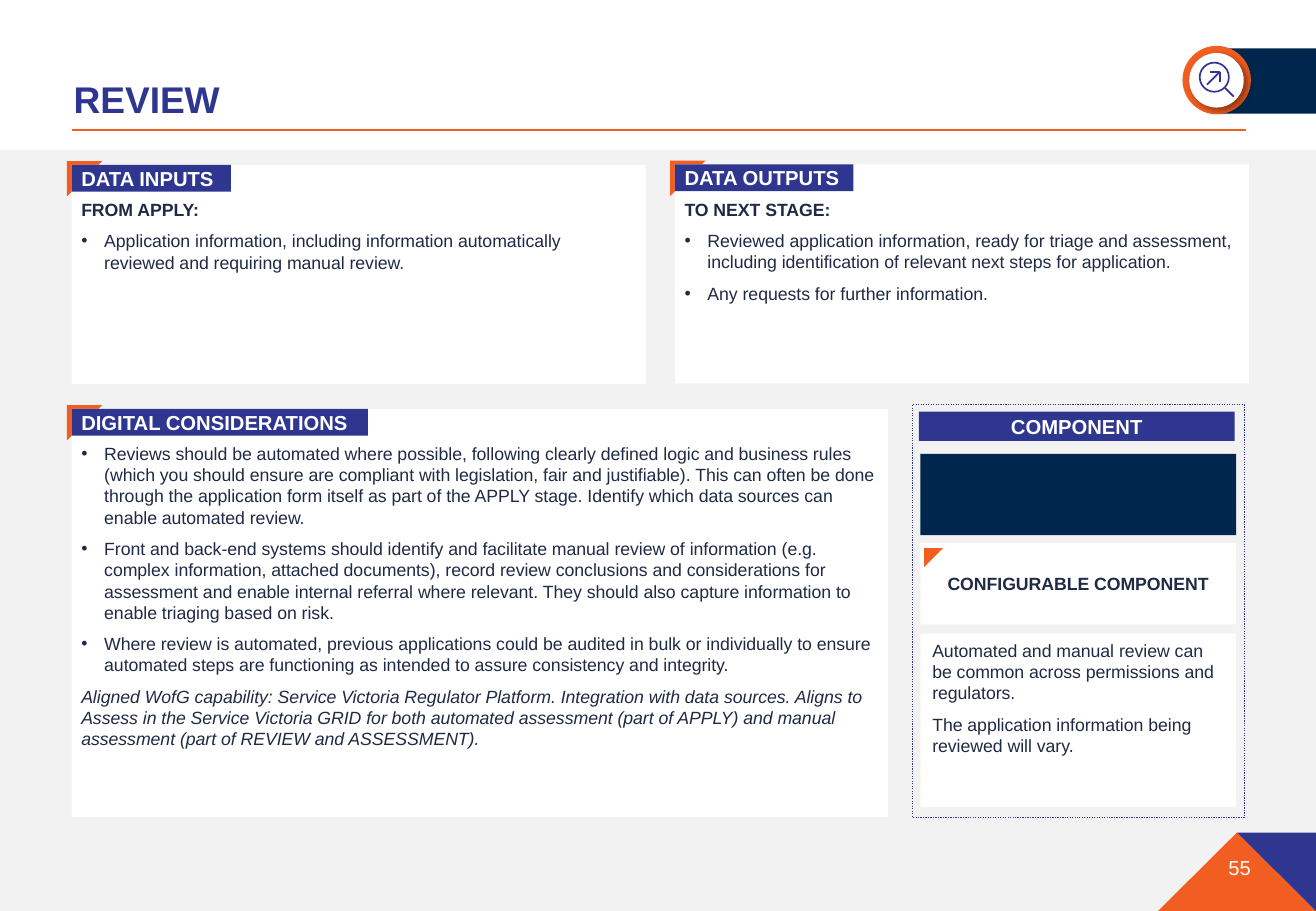
import dataclasses
import typing

import lxml.etree
import pptx
import pptx.dml.color
import pptx.enum.dml
import pptx.enum.shapes
import pptx.enum.text
import pptx.oxml.ns
import pptx.util

Cm = pptx.util.Cm
Pt = pptx.util.Pt
qn = pptx.oxml.ns.qn
Kind = pptx.enum.shapes.MSO_SHAPE
Align = pptx.enum.text.PP_ALIGN
Anchor = pptx.enum.text.MSO_ANCHOR


@dataclasses.dataclass(frozen=True)
class Theme:
    font: str = "Arial"
    blue: str = "2E368F"
    navy: str = "00264D"
    orange: str = "F25E21"
    grey: str = "F2F2F2"
    white: str = "FFFFFF"
    ink: str = "1F2A44"
    title: float = 22
    head: float = 12
    body: float = 10.5


class Box(typing.NamedTuple):
    left: float
    top: float
    width: float
    height: float


class Para(typing.NamedTuple):
    text: str
    bullet: bool = False
    bold: bool = False
    slant: bool = False


class Panel(typing.NamedTuple):
    box: Box
    head: str
    tag: float  # width of the heading tag
    paras: list[Para]


class Line(typing.NamedTuple):
    x1: float
    y1: float
    x2: float
    y2: float
    color: str
    width: float


THEME = Theme()
WIDE, HIGH = 27.51, 19.05
SMALL = (0.2, 0.13, 0.2, 0.13)
PLAIN = (0.25, 0.13, 0.25, 0.13)

PANELS = [
    Panel(Box(1.5, 8.55, 17.07, 8.54), "DIGITAL CONSIDERATIONS", 6.19, [
        Para("Reviews should be automated where possible, following clearly defined logic and business rules (which you should ensure are compliant with legislation, fair and justifiable). This can often be done through the application form itself as part of the APPLY stage. Identify which data sources can enable automated review.", bullet=True),
        Para("Front and back-end systems should identify and facilitate manual review of information (e.g. complex information, attached documents), record review conclusions and considerations for assessment and enable internal referral where relevant. They should also capture information to enable triaging based on risk.", bullet=True),
        Para("Where review is automated, previous applications could be audited in bulk or individually to ensure automated steps are functioning as intended to assure consistency and integrity.", bullet=True),
        Para("Aligned WofG capability: Service Victoria Regulator Platform. Integration with data sources. Aligns to Assess in the Service Victoria GRID for both automated assessment (part of APPLY) and manual assessment (part of REVIEW and ASSESSMENT).", slant=True),
    ]),
    Panel(Box(1.5, 3.45, 12, 4.58), "DATA INPUTS", 3.33, [
        Para("FROM APPLY:", bold=True),
        Para("Application information, including information automatically reviewed and requiring manual review.", bullet=True),
    ]),
    Panel(Box(14.11, 3.44, 12, 4.58), "DATA OUTPUTS", 3.73, [
        Para("TO NEXT STAGE:", bold=True),
        Para("Reviewed application information, ready for triage and assessment, including identification of relevant next steps for application.", bullet=True),
        Para("Any requests for further information.", bullet=True),
    ]),
]
NOTES = [
    Para("Automated and manual review can be common across permissions and regulators."),
    Para("The application information being reviewed will vary."),
]
GLASS = [  # handle, arrow shaft, arrow tip
    (25.61, 1.84, 25.79, 2.02),
    (25.23, 1.77, 25.5, 1.5),
    (25.3, 1.5, 25.51, 1.5),
    (25.51, 1.5, 25.51, 1.71),
]


def tint(text: str) -> pptx.dml.color.RGBColor:
    return pptx.dml.color.RGBColor.from_string(text)


def paint(shape, fill: str | None, edge: str | None = None, width: float = 0.75) -> None:
    if fill:
        shape.fill.solid()
        shape.fill.fore_color.rgb = tint(fill)
    else:
        shape.fill.background()
    if edge:
        shape.line.color.rgb = tint(edge)
        shape.line.width = Pt(width)
    else:
        shape.line.fill.background()
    shape.shadow.inherit = False


def draw(slide, kind, box: Box, fill: str | None, edge: str | None = None, width: float = 0.75):
    shape = slide.shapes.add_shape(kind, *map(Cm, box))
    paint(shape, fill, edge, width)
    return shape


def write(shape, paras: list[Para], size: float, color: str, align=Align.LEFT,
          anchor=Anchor.MIDDLE, pad: tuple = SMALL) -> None:
    frame = shape.text_frame
    frame.word_wrap = True
    frame.vertical_anchor = anchor
    (frame.margin_left, frame.margin_top,
     frame.margin_right, frame.margin_bottom) = map(Cm, pad)
    frame.text = "\n".join(para.text for para in paras)
    for index, (item, para) in enumerate(zip(frame.paragraphs, paras)):
        item.alignment = align
        if index:
            item.space_before = Pt(6)
        if para.bullet:
            props = item._p.get_or_add_pPr()
            props.set("marL", str(Cm(0.48)))
            props.set("indent", str(-Cm(0.48)))
            lxml.etree.SubElement(props, qn("a:buFont"), typeface=THEME.font)
            lxml.etree.SubElement(props, qn("a:buChar"), char="•")
        for run in item.runs:
            font = run.font
            font.name, font.size = THEME.font, Pt(size)
            font.bold, font.italic = para.bold, para.slant
            font.color.rgb = tint(color)


def rule(slide, line: Line) -> None:
    """Draw a straight line without a shadow."""
    ends = map(Cm, line[:4])
    stroke = slide.shapes.add_connector(pptx.enum.shapes.MSO_CONNECTOR.STRAIGHT, *ends)
    stroke.line.color.rgb = tint(line.color)
    stroke.line.width = Pt(line.width)
    lxml.etree.SubElement(stroke._element.spPr, qn("a:effectLst"))


def shade(shape) -> None:
    """Cast a soft shadow down and to the right."""
    effects = shape._element.spPr.find(qn("a:effectLst"))
    outer = lxml.etree.SubElement(effects, qn("a:outerShdw"), blurRad=str(Pt(4)),
                                  dist=str(Pt(3)), dir="2700000", rotWithShape="0")
    color = lxml.etree.SubElement(outer, qn("a:srgbClr"), val="000000")
    lxml.etree.SubElement(color, qn("a:alpha"), val="40000")


def wedge(slide, points: list[tuple[float, float]], fill: str) -> None:
    spots = [(Cm(x), Cm(y)) for x, y in points]
    maker = slide.shapes.build_freeform(*spots[0])
    maker.add_line_segments(spots[1:], close=True)
    paint(maker.convert_to_shape(), fill)


def label(slide, box: Box, text: str, align=Align.LEFT) -> None:
    tag = draw(slide, Kind.RECTANGLE, box, THEME.blue)
    write(tag, [Para(text, bold=True)], THEME.head, THEME.white, align)


def add_panel(slide, panel: Panel) -> None:
    left, top = panel.box.left, panel.box.top
    corner = draw(slide, Kind.HALF_FRAME, Box(left - 0.1, top - 0.08, 0.74, 0.74), THEME.orange)
    corner.adjustments[0] = corner.adjustments[1] = 0.24
    card = draw(slide, Kind.RECTANGLE, panel.box, THEME.white)
    write(card, panel.paras, THEME.body, THEME.ink, anchor=Anchor.TOP, pad=(0.2, 0.71, 0.2, 0.2))
    label(slide, Box(left, top, panel.tag, 0.56), panel.head)


def add_badge(slide) -> None:
    draw(slide, Kind.RECTANGLE, Box(25.5, 1.01, WIDE - 25.5, 1.37), THEME.navy)
    draw(slide, Kind.OVAL, Box(24.72, 0.96, 1.43, 1.43), THEME.orange)
    shade(draw(slide, Kind.OVAL, Box(24.86, 1.11, 1.14, 1.14), THEME.white))
    draw(slide, Kind.OVAL, Box(25.08, 1.31, 0.61, 0.61), None, THEME.blue, 1)
    for ends in GLASS:
        rule(slide, Line(*ends, THEME.blue, 1))


def add_parts(slide) -> None:
    """Draw the component column on the right."""
    left, width = 19.24, 6.6
    draw(slide, Kind.RECTANGLE, Box(left, 9.49, width, 1.7), THEME.navy)
    config = draw(slide, Kind.RECTANGLE, Box(left, 11.36, width, 1.7), THEME.white)
    write(config, [Para("CONFIGURABLE COMPONENT", bold=True)], THEME.body, THEME.ink, Align.CENTER)
    mark = draw(slide, Kind.ISOSCELES_TRIANGLE, Box(19.14, 11.42, 0.56, 0.28), THEME.orange)
    mark.rotation = 315
    frame = draw(slide, Kind.RECTANGLE, Box(19.08, 8.46, 6.93, 8.64), None, THEME.blue)
    frame.line.dash_style = pptx.enum.dml.MSO_LINE.ROUND_DOT
    notes = draw(slide, Kind.RECTANGLE, Box(left, 13.25, width, 3.63), THEME.white)
    write(notes, NOTES, THEME.body, THEME.ink, anchor=Anchor.TOP, pad=PLAIN)
    label(slide, Box(19.21, 8.61, width, 0.61), "COMPONENT", Align.CENTER)


def add_foot(slide) -> None:
    peak, base = (25.86, 17.41), (WIDE, HIGH)
    wedge(slide, [peak, (24.21, HIGH), base], THEME.orange)
    wedge(slide, [(WIDE, 17.41), peak, base], THEME.blue)
    page = slide.shapes.add_textbox(*map(Cm, Box(23.94, 17.75, 2.21, 0.76)))
    write(page, [Para("55")], THEME.head, THEME.white, Align.RIGHT, Anchor.TOP, (0, 0.13, 0, 0.13))


def main() -> None:
    deck = pptx.Presentation()
    deck.slide_width, deck.slide_height = Cm(WIDE), Cm(HIGH)
    slide = deck.slides.add_slide(deck.slide_layouts[6])
    draw(slide, Kind.RECTANGLE, Box(0, 3.13, WIDE, HIGH - 3.13), THEME.grey)
    title = slide.shapes.add_textbox(*map(Cm, Box(1.54, 1.59, 22, 1)))
    write(title, [Para("REVIEW", bold=True)], THEME.title, THEME.blue, anchor=Anchor.TOP, pad=(0, 0, 0, 0))
    rule(slide, Line(1.5, 2.72, 26.04, 2.72, THEME.orange, 1.25))
    for panel in PANELS:
        add_panel(slide, panel)
    add_badge(slide)
    add_parts(slide)
    add_foot(slide)
    deck.save("out.pptx")


if __name__ == "__main__":
    main()
